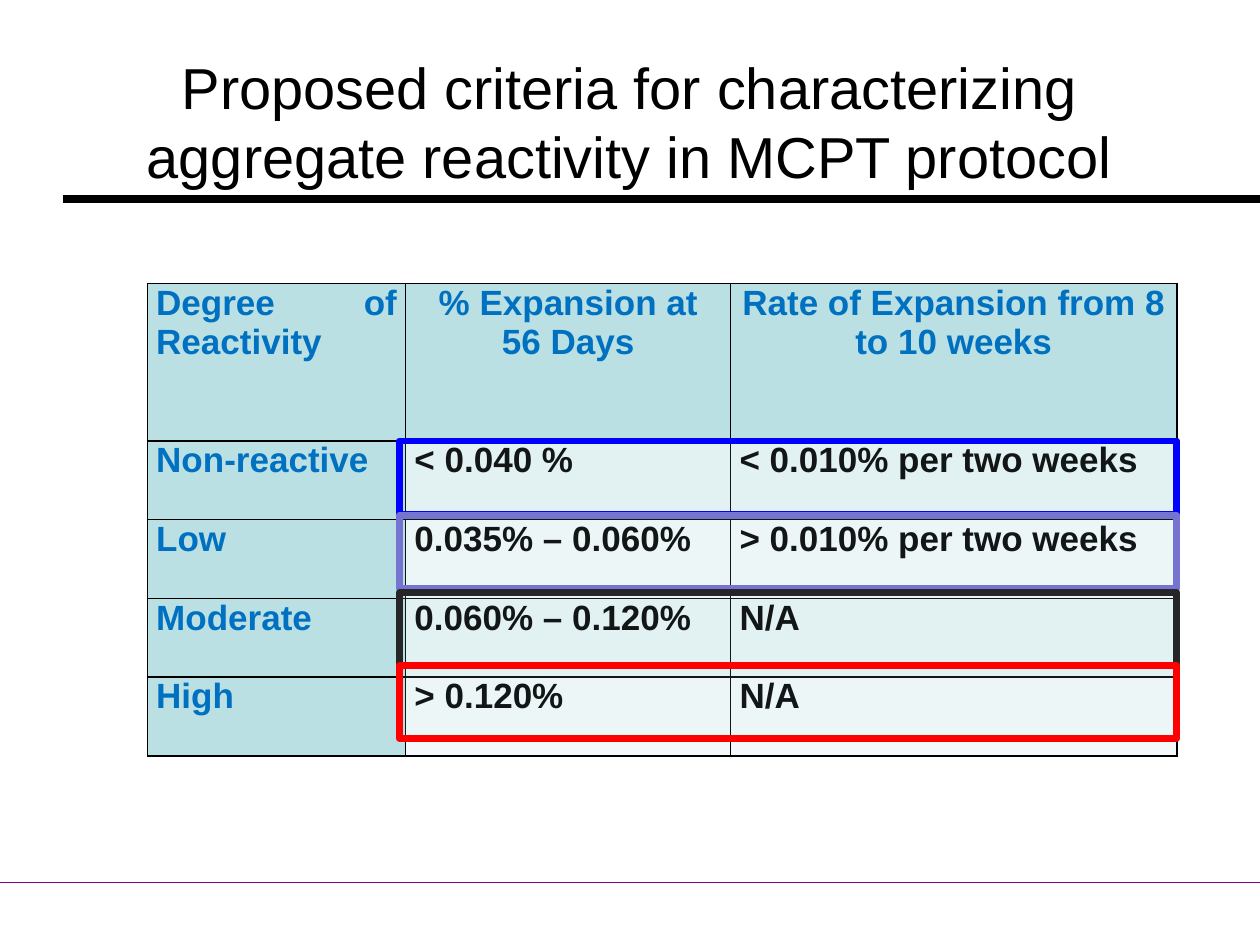
"""Build the slide of proposed MCPT aggregate reactivity criteria."""
from lxml import etree
from pptx import Presentation
from pptx.dml.color import RGBColor
from pptx.enum.shapes import MSO_CONNECTOR, MSO_SHAPE
from pptx.enum.text import MSO_ANCHOR, MSO_AUTO_SIZE, PP_ALIGN
from pptx.oxml.ns import qn
from pptx.util import Inches, Pt

STRAIGHT = MSO_CONNECTOR.STRAIGHT
RECTANGLE = MSO_SHAPE.RECTANGLE
MIDDLE = MSO_ANCHOR.MIDDLE
NO_FIT = MSO_AUTO_SIZE.NONE
CENTER, JUSTIFY = PP_ALIGN.CENTER, PP_ALIGN.JUSTIFY

TITLE = "Proposed criteria for characterizing aggregate reactivity in MCPT protocol"
CRITERIA = [
    ("Degree of Reactivity", "% Expansion at 56 Days", "Rate of Expansion from 8 to 10 weeks"),
    ("Non-reactive", "< 0.040 %", "< 0.010% per two weeks"),
    ("Low", "0.035% – 0.060%", "> 0.010% per two weeks"),
    ("Moderate", "0.060% – 0.120%", "N/A"),
    ("High", "> 0.120%", "N/A"),
]
COLUMN_WIDTHS = (2.05, 2.58, 3.54)
ROW_HEIGHTS = (1.25,) + (0.625,) * 4
HIGHLIGHTS = [(3.5, "0000FF"), (4.09, "7575D1"), (4.7, "262626"), (5.28, "FF0000")]
RULES = [(0.5, 1.58, "000000", 4.5), (0, 7, "800080", 0.25)]
THEME = {
    "font": "Arial", "title_size": 33, "cell_size": 20,
    "text": "000000", "heading": "0070C0", "accent": "BBE0E3",
    "bands": ("E7F3F4", "F3F9FA"), "border": "000000",
    "border_width": 1, "highlight_width": 4, "highlight_alpha": 10,
}


def rgb(code):
    return RGBColor.from_string(code)


def style_paragraph(paragraph, size, color, align, bold=False):
    paragraph.alignment = align
    for run in paragraph.runs:
        run.font.name = THEME["font"]
        run.font.size = Pt(size)
        run.font.bold = bold
        run.font.color.rgb = rgb(color)


def add_title(slide):
    title = slide.shapes.title
    title.left, title.top = Inches(0.58), Inches(0.25)
    title.width, title.height = Inches(8.83), Inches(1.42)
    frame = title.text_frame
    frame.text = TITLE
    frame.word_wrap = True
    frame.auto_size = NO_FIT
    frame.vertical_anchor = MIDDLE
    style_paragraph(frame.paragraphs[0], THEME["title_size"], THEME["text"], CENTER)


def add_rule(slide, left, y, color, width):
    rule = slide.shapes.add_connector(STRAIGHT, Inches(left), Inches(y), Inches(10), Inches(y))
    rule.line.color.rgb = rgb(color)
    rule.line.width = Pt(width)
    etree.SubElement(rule._element.spPr, qn("a:effectLst"))


def add_borders(cell):
    properties = cell._tc.get_or_add_tcPr()
    for position, side in enumerate(("a:lnL", "a:lnR", "a:lnT", "a:lnB")):
        border = etree.Element(qn(side), w=str(Pt(THEME["border_width"])))
        solid = etree.SubElement(border, qn("a:solidFill"))
        etree.SubElement(solid, qn("a:srgbClr"), val=THEME["border"])
        properties.insert(position, border)


def add_criteria(slide):
    table = slide.shapes.add_table(
        len(CRITERIA), len(COLUMN_WIDTHS), Inches(1.17), Inches(2.25),
        Inches(sum(COLUMN_WIDTHS)), Inches(sum(ROW_HEIGHTS))).table
    table.first_row = table.horz_banding = False
    for column, width in zip(table.columns, COLUMN_WIDTHS):
        column.width = Inches(width)
    for row, height in zip(table.rows, ROW_HEIGHTS):
        row.height = Inches(height)
    for r, criterion in enumerate(CRITERIA):
        for c, wording in enumerate(criterion):
            cell = table.cell(r, c)
            is_heading = r == 0 or c == 0
            cell.text = wording
            cell.margin_left = cell.margin_right = Inches(0.07)
            cell.margin_top = cell.margin_bottom = 0
            cell.fill.solid()
            cell.fill.fore_color.rgb = rgb(THEME["accent"] if is_heading else THEME["bands"][(r - 1) % 2])
            add_borders(cell)
            style_paragraph(
                cell.text_frame.paragraphs[0], THEME["cell_size"],
                THEME["heading"] if is_heading else THEME["text"],
                CENTER if r == 0 and c > 0 else JUSTIFY, bold=True)


def add_highlight(slide, top, color):
    highlight = slide.shapes.add_shape(
        RECTANGLE, Inches(3.17), Inches(top), Inches(6.17), Inches(0.58))
    highlight.shadow.inherit = False
    highlight.fill.solid()
    highlight.fill.fore_color.rgb = rgb(THEME["accent"])
    tint = highlight._element.spPr.find(qn("a:solidFill"))[0]
    etree.SubElement(tint, qn("a:alpha"), val=str(THEME["highlight_alpha"] * 1000))
    highlight.line.color.rgb = rgb(color)
    highlight.line.width = Pt(THEME["highlight_width"])


def main():
    deck = Presentation()
    deck.slide_width, deck.slide_height = Inches(10), Inches(7.5)
    slide = deck.slides.add_slide(deck.slide_layouts[5])
    for rule in RULES:
        add_rule(slide, *rule)
    add_title(slide)
    add_criteria(slide)
    for highlight in HIGHLIGHTS:
        add_highlight(slide, *highlight)
    deck.save("out.pptx")


if __name__ == "__main__":
    main()
